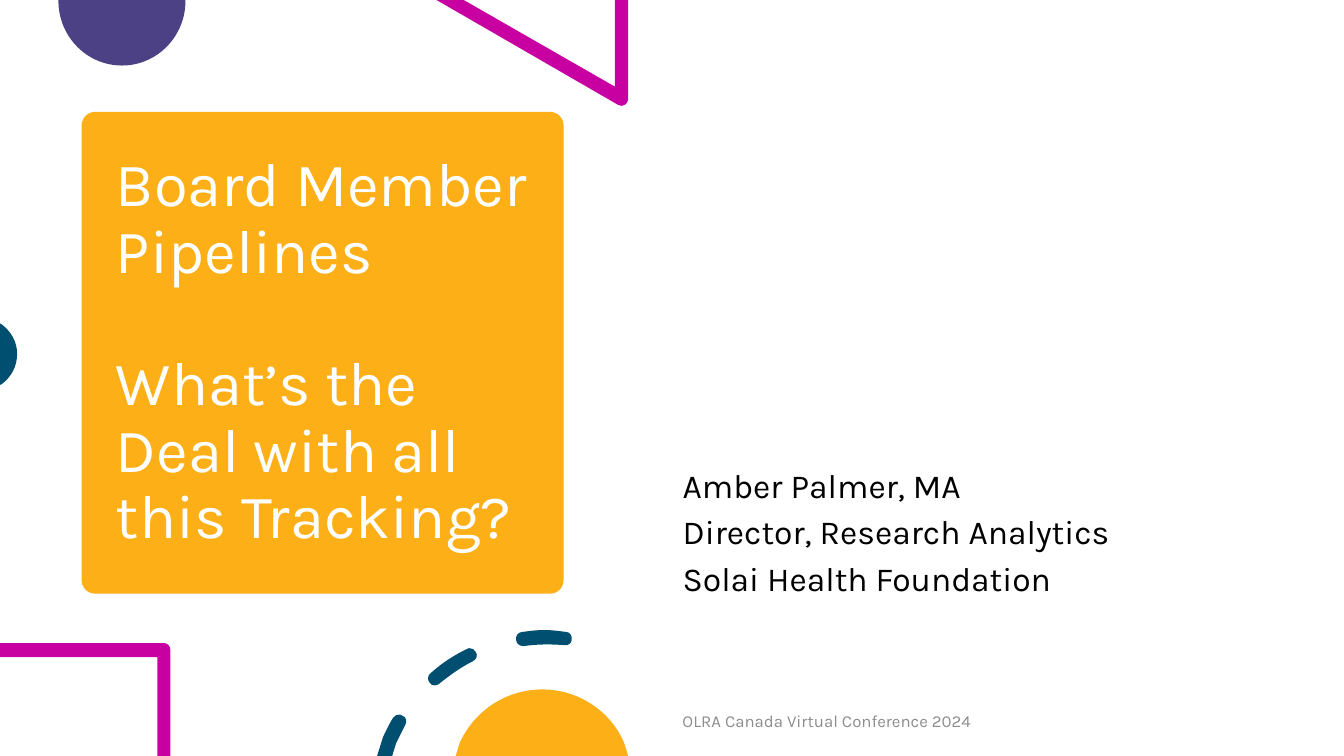
from collections import namedtuple

from lxml import etree
from pptx import Presentation
from pptx.dml.color import RGBColor
from pptx.enum.shapes import MSO_SHAPE
from pptx.enum.text import MSO_ANCHOR, MSO_AUTO_SIZE, PP_ALIGN
from pptx.oxml.ns import qn
from pptx.util import Inches, Pt

ROUNDED = MSO_SHAPE.ROUNDED_RECTANGLE
MIDDLE, BOTTOM = MSO_ANCHOR.MIDDLE, MSO_ANCHOR.BOTTOM
LEFT = PP_ALIGN.LEFT
NO_FIT = MSO_AUTO_SIZE.NONE

FONT = "Karla"
COLORS = {
    "amber": "FCAF17", "purple": "4C4184", "magenta": "C800A1",
    "teal": "004F71", "white": "FFFFFF", "black": "000000", "gray": "8C8C8C",
}

Box = namedtuple("Box", "left top width height")

# Each contour is a start point, then lines (x, y) and cubic curves
# (x1, y1, x2, y2, x, y), in inches from the corner of the panel.
ORNAMENTS = [
    ("purple", [  # half disc at the top
        [(1.84, 0), (0.58, 0), (0.58, 0.01), (0.58, 0.36, 0.86, 0.65, 1.21, 0.65),
         (1.56, 0.65, 1.84, 0.36, 1.84, 0.01)],
    ]),
    ("magenta", [  # triangle corner
        [(6.23, 0), (6.1, 0), (6.1, 0.86), (4.6, 0), (4.33, 0), (6.13, 1.04),
         (6.14, 1.05, 6.15, 1.05, 6.16, 1.05), (6.2, 1.05, 6.23, 1.02, 6.23, 0.98)],
    ]),
    ("teal", [  # disc at the left edge
        [(0, 3.21), (0, 3.82), (0.02, 3.81), (0.11, 3.74, 0.17, 3.64, 0.17, 3.51),
         (0.17, 3.39, 0.11, 3.29, 0.02, 3.22)],
    ]),
    ("magenta", [  # square corner
        [(1.63, 6.38), (0, 6.38), (0, 6.52), (1.56, 6.52), (1.56, 7.5), (1.69, 7.5),
         (1.69, 6.45), (1.69, 6.41, 1.66, 6.38, 1.63, 6.38)],
    ]),
    ("teal", [  # dashed ring
        [(3.97, 7.09), (3.94, 7.08, 3.92, 7.1, 3.9, 7.12),
         (3.86, 7.18, 3.83, 7.25, 3.8, 7.31), (3.74, 7.5), (3.89, 7.5), (3.93, 7.37),
         (3.96, 7.31, 3.99, 7.25, 4.02, 7.19), (4.04, 7.16, 4.03, 7.11, 3.99, 7.1)],
        [(4.65, 6.43), (4.5, 6.5, 4.38, 6.58, 4.27, 6.68),
         (4.24, 6.7, 4.24, 6.75, 4.26, 6.77), (4.27, 6.79, 4.29, 6.8, 4.31, 6.8),
         (4.33, 6.8, 4.35, 6.79, 4.36, 6.78), (4.46, 6.7, 4.57, 6.62, 4.69, 6.56),
         (4.73, 6.54, 4.74, 6.5, 4.72, 6.47), (4.71, 6.44, 4.68, 6.43, 4.65, 6.43)],
        [(5.4, 6.25), (5.32, 6.25, 5.25, 6.26, 5.18, 6.27),
         (5.14, 6.27, 5.11, 6.31, 5.12, 6.35), (5.12, 6.38, 5.15, 6.41, 5.19, 6.41),
         (5.33, 6.39, 5.46, 6.39, 5.6, 6.4), (5.63, 6.41, 5.67, 6.38, 5.67, 6.35),
         (5.68, 6.31, 5.65, 6.27, 5.62, 6.27), (5.54, 6.26, 5.47, 6.25, 5.4, 6.25)],
    ]),
    ("amber", [  # disc at the bottom
        [(5.38, 6.84), (5.01, 6.84, 4.7, 7.06, 4.56, 7.37), (4.52, 7.5), (6.23, 7.5),
         (6.19, 7.37), (6.06, 7.06, 5.74, 6.84, 5.38, 6.84)],
    ]),
]


def color(name):
    return RGBColor.from_string(COLORS[name])


def paint(shape, name):
    shape.shadow.inherit = False
    shape.fill.solid()
    shape.fill.fore_color.rgb = color(name)
    shape.line.fill.background()


def place(shape, box):
    shape.left, shape.top, shape.width, shape.height = (Inches(v) for v in box)


def write(frame, lines, size, name, anchor):
    """Fill the frame with one left-aligned paragraph per line."""
    frame.text = "\n".join(lines)
    frame.word_wrap = True
    frame.auto_size = NO_FIT
    frame.vertical_anchor = anchor
    for para in frame.paragraphs:
        para.alignment = LEFT
        para.font.name = FONT
        para.font.size = Pt(size)
        para.font.color.rgb = color(name)


def bend(shape, segments, box):
    """Turn the straight steps that stand for curves into cubic curves."""
    steps = list(shape.element.iter(qn("a:lnTo")))
    for step, segment in zip(steps, segments):
        if len(segment) == 2:
            continue
        curve = etree.Element(qn("a:cubicBezTo"))
        for x, y in zip(segment[::2], segment[1::2]):
            point = etree.SubElement(curve, qn("a:pt"))
            point.set("x", str(Inches(box.left + x) - shape.left))
            point.set("y", str(Inches(box.top + y) - shape.top))
        step.getparent().replace(step, curve)


def add_ornaments(page, box):
    for name, contours in ORNAMENTS:
        builder = None
        for contour in contours:
            points = [(Inches(box.left + segment[-2]), Inches(box.top + segment[-1]))
                      for segment in contour]
            if builder is None:
                builder = page.shapes.build_freeform(*points[0])
            else:
                builder.move_to(*points[0])
            builder.add_line_segments(points[1:], close=True)
        ornament = builder.convert_to_shape()
        bend(ornament, [segment for contour in contours for segment in contour[1:]], box)
        paint(ornament, name)


def add_title_card(page, box):
    card = page.shapes.add_shape(ROUNDED, *(Inches(v) for v in box))
    card.adjustments[0] = 0.028
    paint(card, "amber")

    title = page.shapes.title
    card.element.addnext(title.element)  # the title lies in front of its card
    place(title, Box(box.left + 0.24, box.top + 0.11, box.width - 0.47, box.height - 0.22))
    lines = ["Board Member Pipelines", "What’s the Deal with all this Tracking?"]
    write(title.text_frame, lines, 44, "white", MIDDLE)
    for para in title.text_frame.paragraphs:
        para.line_spacing = 0.9
        para.space_before = Pt(0)
    title.text_frame.paragraphs[1].space_before = Pt(47)


def add_speaker(page, box):
    speaker = page.placeholders[1]
    place(speaker, box)
    lines = ["Amber Palmer, MA", "Director, Research Analytics", "Solai Health Foundation"]
    write(speaker.text_frame, lines, 24, "black", BOTTOM)
    speaker.text_frame.margin_bottom = Inches(0.32)
    for para in speaker.text_frame.paragraphs:
        para.line_spacing = 0.8
        para.space_before = Pt(10)


def add_event_line(page, box):
    event = page.shapes.add_textbox(*(Inches(v) for v in box))
    write(event.text_frame, ["OLRA Canada Virtual Conference 2024"], 12, "gray", MIDDLE)
    event.text_frame.paragraphs[0].space_after = Pt(6)


def main():
    deck = Presentation()
    deck.slide_width, deck.slide_height = Inches(13.33), Inches(7.5)
    page = deck.slides.add_slide(deck.slide_layouts[0])
    page.background.fill.solid()
    page.background.fill.fore_color.rgb = color("white")
    add_title_card(page, Box(0.81, 1.11, 4.78, 4.78))
    add_ornaments(page, Box(0, 0, 6.23, 7.5))
    add_speaker(page, Box(6.67, 0.9, 5.75, 5.35))
    add_event_line(page, Box(6.67, 6.95, 4.71, 0.4))
    deck.save("out.pptx")


if __name__ == "__main__":
    main()
